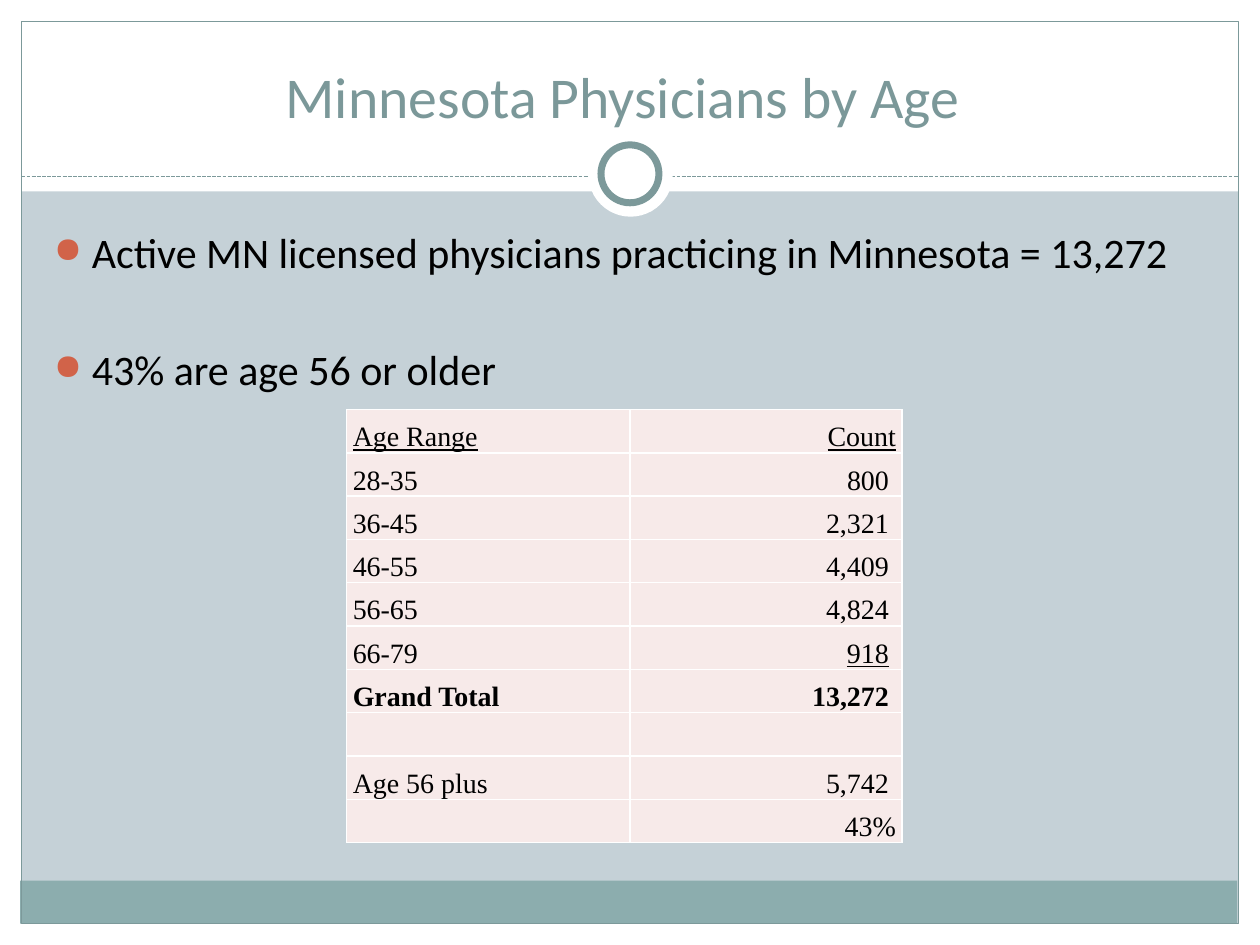
import pptx
import pptx.util
import pptx.dml.color
import pptx.enum.dml
import pptx.enum.shapes
import pptx.enum.text
import pptx.oxml.ns
import lxml.etree

Inches = pptx.util.Inches
Pt = pptx.util.Pt
SHAPE = pptx.enum.shapes.MSO_SHAPE
ALIGN = pptx.enum.text.PP_ALIGN
ANCHOR = pptx.enum.text.MSO_ANCHOR
qn = pptx.oxml.ns.qn
COLORS = {"bg": "C5D1D7", "white": "FFFFFF", "footer": "8CADAE", "line": "7C999A",
          "title": "7B9899", "text": "000000", "bullet": "D16349", "cell": "F7EAE9"}


def rgb(name):
    return pptx.dml.color.RGBColor.from_string(COLORS[name])


def add_run(p, text, color, formats):
    r = p.add_run()
    r.text = text
    r.font.color.rgb = rgb(color)
    for key, value in formats.items():
        setattr(r.font, key, value)


prs = pptx.Presentation()
prs.slide_width, prs.slide_height = Inches(10), Inches(7.5)
s = prs.slides.add_slide(prs.slide_layouts[6])
s.background.fill.solid()
s.background.fill.fore_color.rgb = rgb("bg")

shapes = [
    (SHAPE.RECTANGLE, (0, 7.33, 10, 0.17), "white", None),
    (SHAPE.RECTANGLE, (0, 0, 10, 1.52), "white", None),
    (SHAPE.RECTANGLE, (0, 0, 0.17, 7.5), "white", None),
    (SHAPE.RECTANGLE, (9.83, 0, 0.17, 7.5), "white", None),
    (SHAPE.RECTANGLE, (0.16, 6.99, 9.66, 0.34), "footer", None),
    (SHAPE.RECTANGLE, (0.17, 0.17, 9.66, 7.16), None, 0.75),
    (None, (0.17, 1.4, 9.83, 1.4), None, 0.75),
    (SHAPE.OVAL, (4.67, 1.05, 0.67, 0.67), "white", None),
    (SHAPE.OVAL, (4.77, 1.15, 0.46, 0.46), "white", 4),
]
for kind, box, fill, width in shapes:
    box = [Inches(v) for v in box]
    if kind is None:
        sp = s.shapes.add_connector(pptx.enum.shapes.MSO_CONNECTOR.STRAIGHT, *box)
        sp.line.dash_style = pptx.enum.dml.MSO_LINE.SQUARE_DOT
        lxml.etree.SubElement(sp._element.spPr, qn("a:effectLst"))
    else:
        sp = s.shapes.add_shape(kind, *box)
        sp.shadow.inherit = False
        if fill:
            sp.fill.solid()
            sp.fill.fore_color.rgb = rgb(fill)
        else:
            sp.fill.background()
    if width:
        sp.line.color.rgb = rgb("line")
        sp.line.width = Pt(width)
    else:
        sp.line.fill.background()

sp = s.shapes.add_textbox(Inches(0.33), Inches(0.25), Inches(9.33), Inches(0.83))
tf = sp.text_frame
tf.word_wrap = True
tf.vertical_anchor = ANCHOR.BOTTOM
p = tf.paragraphs[0]
p.alignment = ALIGN.CENTER
add_run(p, "Minnesota Physicians by Age ", "title", {"name": "Calibri", "size": Pt(33)})

rows = [("Age Range", "Count"), ("28-35", "800 "), ("36-45", "2,321 "),
        ("46-55", "4,409 "), ("56-65", "4,824 "), ("66-79", "918 "),
        ("Grand Total", "13,272 "), ("", ""), ("Age 56 plus", "5,742 "), ("", "43%")]
underlined = ("Age Range", "Count", "918")
cell_format = {"margin_left": Inches(0.05), "margin_right": Inches(0.05),
               "margin_top": Inches(0.01), "margin_bottom": 0,
               "vertical_anchor": ANCHOR.BOTTOM}
table = s.shapes.add_table(len(rows), 2, Inches(2.75), Inches(3.25),
                           Inches(4.41), Inches(3.44)).table
for column, width in zip(table.columns, (2.25, 2.16)):
    column.width = Inches(width)
for i, row in enumerate(rows):
    for j, text in enumerate(row):
        cell = table.cell(i, j)
        for key, value in cell_format.items():
            setattr(cell, key, value)
        tcPr = cell._tc.get_or_add_tcPr()
        for side in ("lnL", "lnR", "lnT", "lnB"):
            ln = lxml.etree.SubElement(tcPr, qn("a:" + side), w=str(Pt(1)))
            solid = lxml.etree.SubElement(ln, qn("a:solidFill"))
            lxml.etree.SubElement(solid, qn("a:srgbClr"), val=COLORS["white"])
        cell.fill.solid()
        cell.fill.fore_color.rgb = rgb("cell")
        p = cell.text_frame.paragraphs[0]
        p.alignment = ALIGN.RIGHT if j else ALIGN.LEFT
        word = text.rstrip()
        for part in (word, text[len(word):]):
            if part:
                add_run(p, part, "text", {
                    "name": "Times New Roman", "size": Pt(16),
                    "bold": row[0] == "Grand Total", "underline": part in underlined})

sp = s.shapes.add_textbox(Inches(0.33), Inches(1.75), Inches(9.42), Inches(1.42))
tf = sp.text_frame
tf.word_wrap = True
bullets = [("Active MN licensed physicians practicing in Minnesota = 13,272", 0),
           ("43% are age 56 or older", 38)]
for i, (text, space) in enumerate(bullets):
    p = tf.add_paragraph() if i else tf.paragraphs[0]
    p.space_before = Pt(space)
    pPr = p._p.get_or_add_pPr()
    pPr.set("marL", str(Inches(0.3)))
    pPr.set("indent", str(Inches(-0.3)))
    buClr = lxml.etree.SubElement(pPr, qn("a:buClr"))
    lxml.etree.SubElement(buClr, qn("a:srgbClr"), val=COLORS["bullet"])
    lxml.etree.SubElement(pPr, qn("a:buSzPct"), val="85000")
    lxml.etree.SubElement(pPr, qn("a:buChar"), char="●")
    add_run(p, text, "text", {"name": "Calibri", "size": Pt(24)})

prs.save("out.pptx")
